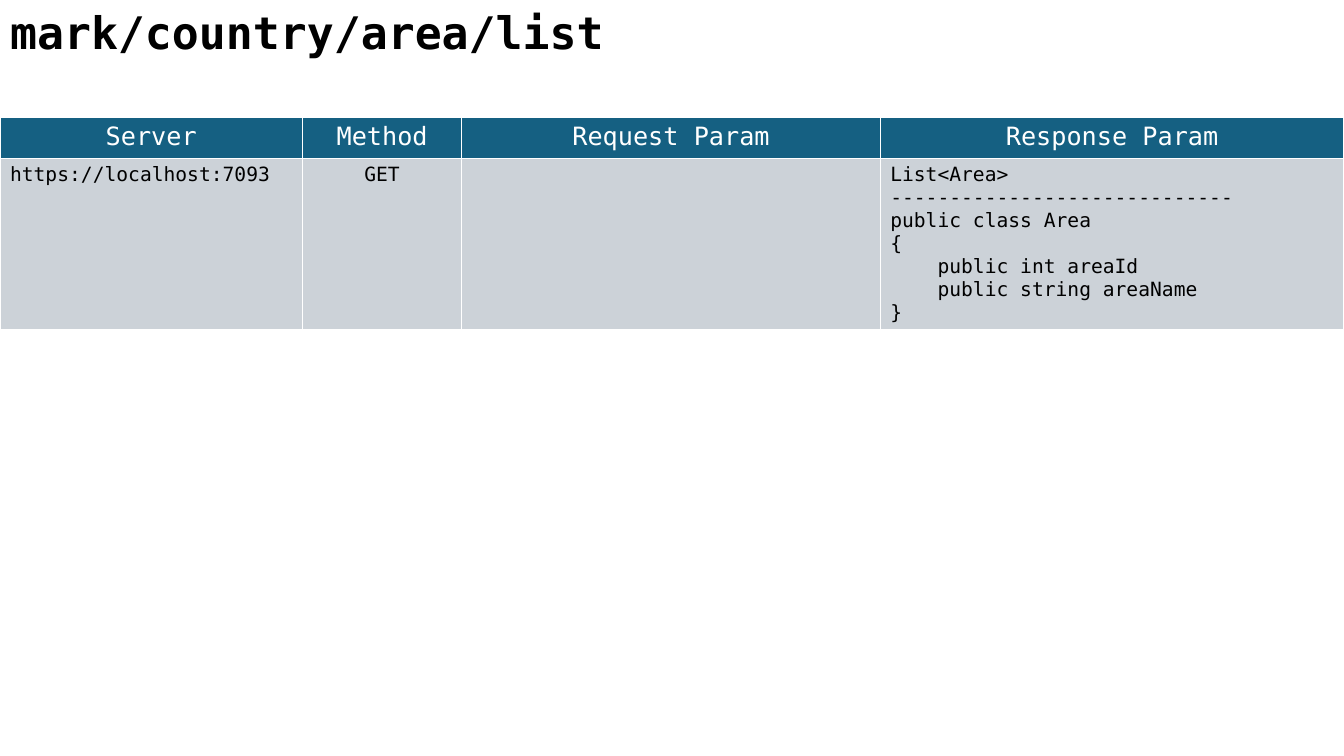
from pptx import Presentation
from pptx.dml.color import RGBColor
from pptx.enum.text import MSO_ANCHOR, MSO_AUTO_SIZE, PP_ALIGN
from pptx.util import Inches, Pt

# Content
TITLE = "mark/country/area/list"
HEADERS = ["Server", "Method", "Request Param", "Response Param"]
RESPONSE = [
    "List<Area>",
    "-" * 29,
    "public class Area",
    "{",
    "    public int areaId",
    "    public string areaName",
    "}",
]
VALUES = [["https://localhost:7093"], ["GET"], [], RESPONSE]

# Layout and formats
WIDTH, HEIGHT = 13.33, 7.5
COLUMNS = [3, 1.58, 4.15, 4.6]
ROWS = [0.41, 1.7]
TABLE_TOP = 1.16
FONT = "DejaVu Sans Mono"
LEFT, CENTER = PP_ALIGN.LEFT, PP_ALIGN.CENTER
HEADER = {"size": Pt(18), "bold": False, "color": "FFFFFF"}
BODY = {"size": Pt(14), "bold": False, "color": "000000"}
HEADING = {"size": Pt(32), "bold": True, "color": "000000"}
HEADER_FILL, BODY_FILL = "156082", "CCD2D8"


def rgb(value):
    return RGBColor.from_string(value)


def write(tf, lines, style, align):
    for i, line in enumerate(lines):
        p = tf.paragraphs[0] if i == 0 else tf.add_paragraph()
        p.alignment = align
        r = p.add_run()
        r.text = line
        r.font.name = FONT
        r.font.color.rgb = rgb(style["color"])
        for name in ("size", "bold"):
            setattr(r.font, name, style[name])


def fill_cell(cell, lines, style, align, fill):
    cell.fill.solid()
    cell.fill.fore_color.rgb = rgb(fill)
    write(cell.text_frame, lines, style, align)


def main():
    prs = Presentation()
    prs.slide_width, prs.slide_height = Inches(WIDTH), Inches(HEIGHT)
    s = prs.slides.add_slide(prs.slide_layouts[5])

    # Title
    sp = s.shapes.title
    sp.left, sp.top, sp.width, sp.height = map(Inches, (0, 0, 6.39, 0.64))
    tf = sp.text_frame
    tf.word_wrap = False
    tf.auto_size = MSO_AUTO_SIZE.NONE
    tf.vertical_anchor = MSO_ANCHOR.TOP
    write(tf, [TITLE], HEADING, LEFT)

    # Endpoint table
    table = s.shapes.add_table(
        len(ROWS), len(COLUMNS), 0, Inches(TABLE_TOP),
        Inches(sum(COLUMNS)), Inches(sum(ROWS))).table
    for row, height in zip(table.rows, ROWS):
        row.height = Inches(height)
    for col, width in enumerate(COLUMNS):
        table.columns[col].width = Inches(width)
        fill_cell(table.cell(0, col), [HEADERS[col]], HEADER, CENTER, HEADER_FILL)
        align = CENTER if HEADERS[col] == "Method" else LEFT
        fill_cell(table.cell(1, col), VALUES[col], BODY, align, BODY_FILL)

    prs.save("out.pptx")


if __name__ == "__main__":
    main()
